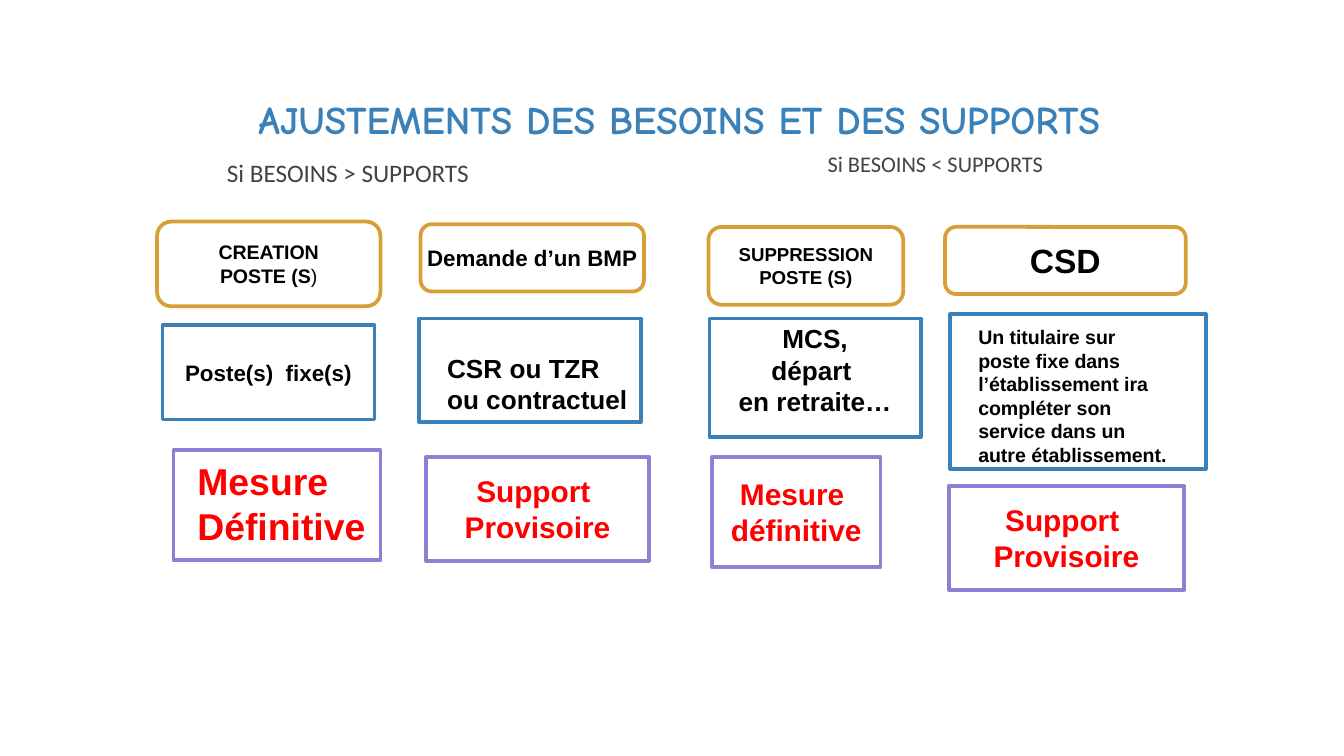
from dataclasses import dataclass

from pptx import Presentation
from pptx.dml.color import RGBColor
from pptx.enum.shapes import MSO_SHAPE
from pptx.enum.text import MSO_ANCHOR, MSO_AUTO_SIZE, PP_ALIGN
from pptx.util import Cm, Pt

ROUNDED = MSO_SHAPE.FLOWCHART_ALTERNATE_PROCESS
RECT = MSO_SHAPE.FLOWCHART_PROCESS
LEFT, CENTER, JUSTIFY = PP_ALIGN.LEFT, PP_ALIGN.CENTER, PP_ALIGN.JUSTIFY
TOP, MIDDLE = MSO_ANCHOR.TOP, MSO_ANCHOR.MIDDLE
GROW = MSO_AUTO_SIZE.SHAPE_TO_FIT_TEXT

COLORS = {
    "white": "FFFFFF",
    "black": "000000",
    "grey": "434343",
    "red": "FF0000",
    "blue": "3A81BA",
    "gold": "D89F39",
    "purple": "8B81D2",
}
# Each kind of box: preset shape, outline colour, text colour
KINDS = {
    "need": (ROUNDED, "gold", "black"),
    "means": (RECT, "blue", "black"),
    "outcome": (RECT, "purple", "red"),
}


@dataclass
class Box:
    kind: str
    at: tuple[float, float, float, float]
    text: str = ""
    size: float = 12
    plain_end: str = ""
    bottom: float = 0.13


@dataclass
class Label:
    at: tuple[float, float, float, float]
    text: str
    size: float
    color: str = "black"
    font: str = "Arial"
    bold: bool = True
    align: PP_ALIGN = LEFT
    spacing: float = 1.0
    inset: float = 0.13
    grow: bool = True


HEADINGS = [
    Label((2.26, 1.55, 21.16, 3.35), "AJUSTEMENTS DES BESOINS ET DES SUPPORTS", 21,
          "blue", "Comic Neue", align=CENTER, inset=0.25, grow=False),
    Label((4.04, 2.72, 8.79, 8.84), "Si BESOINS > SUPPORTS", 13.5, "grey", "Calibri",
          bold=False, align=JUSTIFY, inset=0.25, grow=False),
    Label((13.26, 2.74, 8.84, 9.14), "Si BESOINS < SUPPORTS", 12, "grey", "Calibri",
          bold=False, align=CENTER, spacing=0.8, inset=0.25, grow=False),
]
BOXES = [
    Box("need", (2.97, 4.19, 4.22, 1.6), "CREATION\nPOSTE (S", 10.5, plain_end=")"),
    Box("means", (3.07, 6.15, 4.01, 1.78), "Poste(s)  fixe(s)", 12),
    Box("outcome", (3.28, 8.51, 3.91, 2.08)),
    Box("need", (7.95, 4.24, 4.22, 1.27), "Demande d’un BMP", 12),
    Box("means", (7.92, 6.02, 4.19, 1.96)),
    Box("outcome", (8.05, 8.64, 4.22, 1.96), "Support \nProvisoire", 16),
    Box("need", (13.39, 4.29, 3.68, 1.47), "SUPPRESSION\nPOSTE (S)", 10),
    Box("means", (13.41, 6.02, 3.99, 2.24), "MCS,\ndépart \nen retraite…", 14, bottom=0.43),
    Box("outcome", (13.46, 8.64, 3.18, 2.08), "Mesure \ndéfinitive", 16),
    Box("need", (17.86, 4.29, 4.55, 1.27), "CSD", 18),
    Box("means", (17.96, 5.94, 4.83, 2.92)),
    Box("outcome", (17.93, 9.19, 4.45, 1.96), "Support \nProvisoire", 16),
]
BOX_LABELS = [
    Label((3.48, 8.53, 3.96, 1.96), "Mesure\nDéfinitive", 20, "red"),
    Label((8.2, 6.53, 4.06, 1.45), "CSR ou TZR ou contractuel", 14),
    Label((18.24, 6.02, 4.17, 2.95),
          "Un titulaire sur poste fixe dans l’établissement ira\n"
          "compléter son service dans un autre établissement.", 10.5),
]


def rgb(name: str) -> RGBColor:
    return RGBColor.from_string(COLORS[name])


def write(tf, text: str, *, size: float, color: str, font: str = "Arial", bold: bool = True,
          align: PP_ALIGN = CENTER, spacing: float = 1.0, plain_end: str = "") -> None:
    """Write one paragraph per line; plain_end closes the last one without bold."""
    lines = text.split("\n")
    for i, line in enumerate(lines):
        p = tf.add_paragraph() if i else tf.paragraphs[0]
        p.alignment = align
        p.line_spacing = spacing
        runs = [(line, bold)]
        if plain_end and i == len(lines) - 1:
            runs.append((plain_end, False))
        for content, is_bold in runs:
            r = p.add_run()
            r.text = content
            r.font.name = font
            r.font.size = Pt(size)
            r.font.bold = is_bold
            r.font.color.rgb = rgb(color)


def draw_box(s, box: Box) -> None:
    preset, outline, ink = KINDS[box.kind]
    sp = s.shapes.add_shape(preset, *map(Cm, box.at))
    sp.shadow.inherit = False
    sp.fill.solid()
    sp.fill.fore_color.rgb = rgb("white")
    sp.line.color.rgb = rgb(outline)
    sp.line.width = Pt(2)
    if box.text:
        tf = sp.text_frame
        tf.word_wrap = False
        tf.vertical_anchor = MIDDLE
        tf.margin_bottom = Cm(box.bottom)
        write(tf, box.text, size=box.size, color=ink, plain_end=box.plain_end)


def draw_label(s, label: Label) -> None:
    tf = s.shapes.add_textbox(*map(Cm, label.at)).text_frame
    tf.word_wrap = True
    tf.vertical_anchor = TOP
    tf.margin_left = tf.margin_right = Cm(0.25)
    tf.margin_top = tf.margin_bottom = Cm(label.inset)
    if label.grow:
        tf.auto_size = GROW
    write(tf, label.text, size=label.size, color=label.color, font=label.font,
          bold=label.bold, align=label.align, spacing=label.spacing)


def main() -> None:
    prs = Presentation()
    prs.slide_width, prs.slide_height = Cm(25.4), Cm(14.29)
    s = prs.slides.add_slide(prs.slide_layouts[6])
    for heading in HEADINGS:
        draw_label(s, heading)
    for box in BOXES:
        draw_box(s, box)
    for label in BOX_LABELS:
        draw_label(s, label)
    prs.save("out.pptx")


if __name__ == "__main__":
    main()
